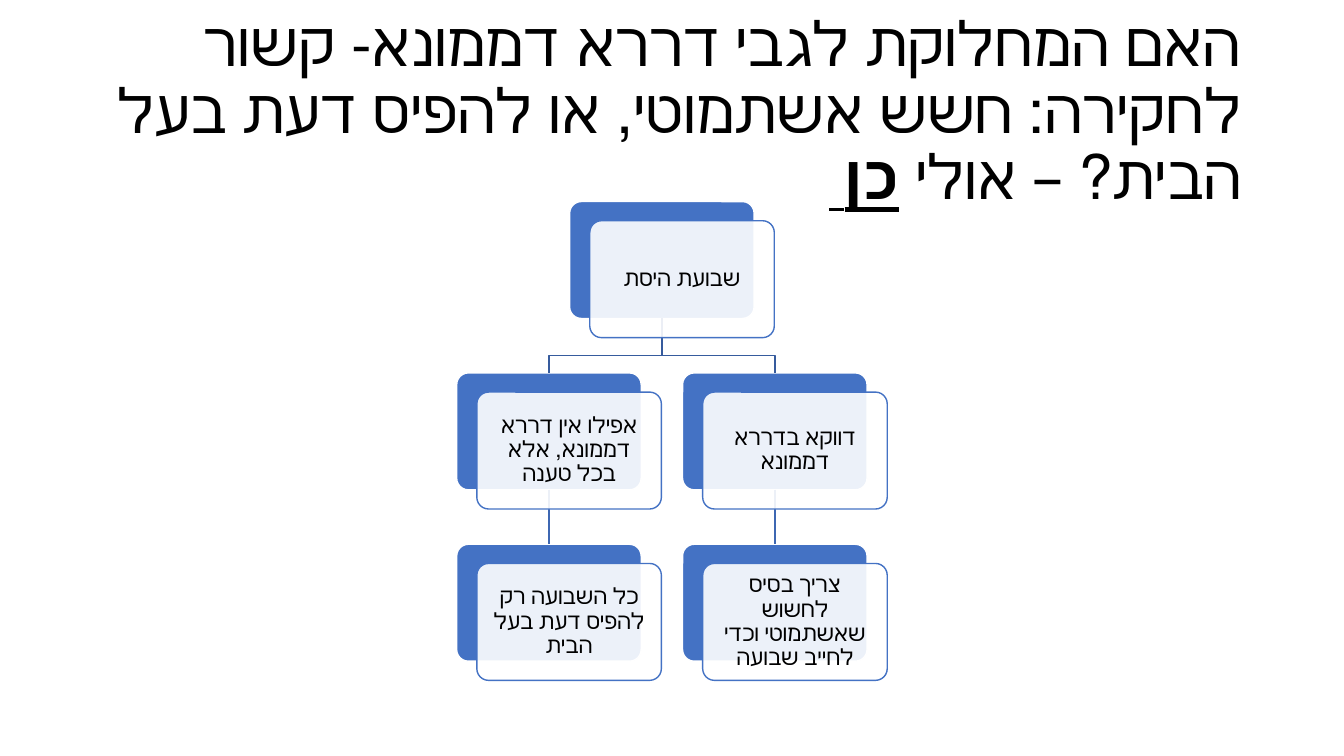
import pptx
import pptx.dml.color
import pptx.enum.shapes
import pptx.enum.text
import pptx.oxml
import pptx.oxml.ns
import pptx.util
from lxml import etree

Inches = pptx.util.Inches
SHAPES = pptx.enum.shapes.MSO_SHAPE
ALIGN = pptx.enum.text.PP_ALIGN

# Card grid, in inches; columns may be fractional
TREE_LEFT, TREE_TOP = 4.53, 2.0
COLUMN_PITCH, ROW_PITCH = 2.24, 1.7
CARD_WIDTH, CARD_HEIGHT = 1.83, 1.16
FRONT_SHIFT = (0.2, 0.19)

# Name: (column, row, text)
CARDS = {
    "oath": (0.5, 0, "שבועת היסת"),
    "only_with_basis": (1, 1, "דווקא בדררא דממונא"),
    "needs_basis": (1, 2, "צריך בסיס לחשוש שאשתמוטי וכדי לחייב שבועה"),
    "any_claim": (0, 1, "אפילו אין דררא דממונא, אלא בכל טענה"),
    "appease_owner": (0, 2, "כל השבועה רק להפיס דעת בעל הבית"),
}
BRANCHES = [("oath", "any_claim"), ("oath", "only_with_basis")]
STEMS = [("any_claim", "appease_owner"), ("only_with_basis", "needs_basis")]


def color(value):
    return pptx.dml.color.RGBColor.from_string(value)


def style_line(shape, value):
    shape.line.color.rgb = color(value)
    shape.line.width = pptx.util.Pt(1)


def write_text(shape, runs, size, align, margins=(0.1, 0.05)):
    """Write one right-to-left paragraph; runs are (text, bold, underline)."""
    frame = shape.text_frame
    frame.word_wrap = True
    frame.vertical_anchor = pptx.enum.text.MSO_ANCHOR.MIDDLE
    frame.margin_left = frame.margin_right = Inches(margins[0])
    frame.margin_top = frame.margin_bottom = Inches(margins[1])
    paragraph = frame.paragraphs[0]
    paragraph.alignment = align
    paragraph.line_spacing = 0.9
    paragraph._p.get_or_add_pPr().set("rtl", "1")
    for text, bold, underline in runs:
        run = paragraph.add_run()
        run.text = text
        run.font.size = pptx.util.Pt(size)
        run.font.name = "Calibri"
        run.font.bold = bold
        run.font.underline = underline
        run.font.color.rgb = color("000000")
        run._r.get_or_add_rPr().set("lang", "he-IL")


def add_title(slide, left, top, width, height):
    title = slide.shapes.add_textbox(*map(Inches, (left, top, width, height)))
    question = ("האם המחלוקת לגבי דררא דממונא- קשור לחקירה: חשש אשתמוטי, "
                "או להפיס דעת בעל הבית? – אולי ")
    write_text(title, [(question, False, False), ("כן", True, True), (" ", False, True)],
               size=44, align=ALIGN.RIGHT)


def add_card(slide, left, top, fill, line):
    card = slide.shapes.add_shape(
        SHAPES.ROUNDED_RECTANGLE, *map(Inches, (left, top, CARD_WIDTH, CARD_HEIGHT)))
    card.adjustments[0] = 0.1
    card.shadow.inherit = False
    card.fill.solid()
    card.fill.fore_color.rgb = color(fill)
    style_line(card, line)
    return card


def add_branch(slide, parent, child):
    start_x, start_y = parent.left + parent.width // 2, parent.top + parent.height
    end_x, end_y = child.left + child.width // 2, child.top
    bend_y = start_y + int((end_y - start_y) * 0.68)
    builder = slide.shapes.build_freeform(start_x, start_y)
    builder.add_line_segments([(start_x, bend_y), (end_x, bend_y), (end_x, end_y)], close=False)
    branch = builder.convert_to_shape()
    branch.fill.background()
    branch.shadow.inherit = False
    style_line(branch, "365B9D")


def add_stem(slide, parent, child):
    stem = slide.shapes.add_connector(pptx.enum.shapes.MSO_CONNECTOR.STRAIGHT, 0, 0, 0, 0)
    stem.begin_connect(parent, 2)
    stem.end_connect(child, 0)
    style_line(stem, "3E67B2")
    etree.SubElement(stem._element.spPr, pptx.oxml.ns.qn("a:effectLst"))


def add_tree(slide, left, top):
    places = {name: (left + column * COLUMN_PITCH, top + row * ROW_PITCH)
              for name, (column, row, _) in CARDS.items()}
    # Blue cards behind
    backs = {name: add_card(slide, x, y, "4472C4", "FFFFFF")
             for name, (x, y) in places.items()}
    # Links between levels
    for parent, child in BRANCHES:
        add_branch(slide, backs[parent], backs[child])
    for parent, child in STEMS:
        add_stem(slide, backs[parent], backs[child])
    # Translucent cards with the text
    for name, (x, y) in places.items():
        front = add_card(slide, x + FRONT_SHIFT[0], y + FRONT_SHIFT[1], "FFFFFF", "4472C4")
        fill_color = front._element.spPr.find(
            pptx.oxml.ns.qn("a:solidFill")).find(pptx.oxml.ns.qn("a:srgbClr"))
        etree.SubElement(fill_color, pptx.oxml.ns.qn("a:alpha")).set("val", "90000")
        write_text(front, [(CARDS[name][2], False, False)], size=16,
                   align=ALIGN.CENTER, margins=(0.07, 0.07))


def main():
    presentation = pptx.Presentation()
    presentation.slide_width = Inches(13.33)
    presentation.slide_height = Inches(7.5)
    slide = presentation.slides.add_slide(presentation.slide_layouts[6])
    add_title(slide, 0.92, 0.4, 11.5, 1.45)
    add_tree(slide, TREE_LEFT, TREE_TOP)
    presentation.save("out.pptx")


if __name__ == "__main__":
    main()
